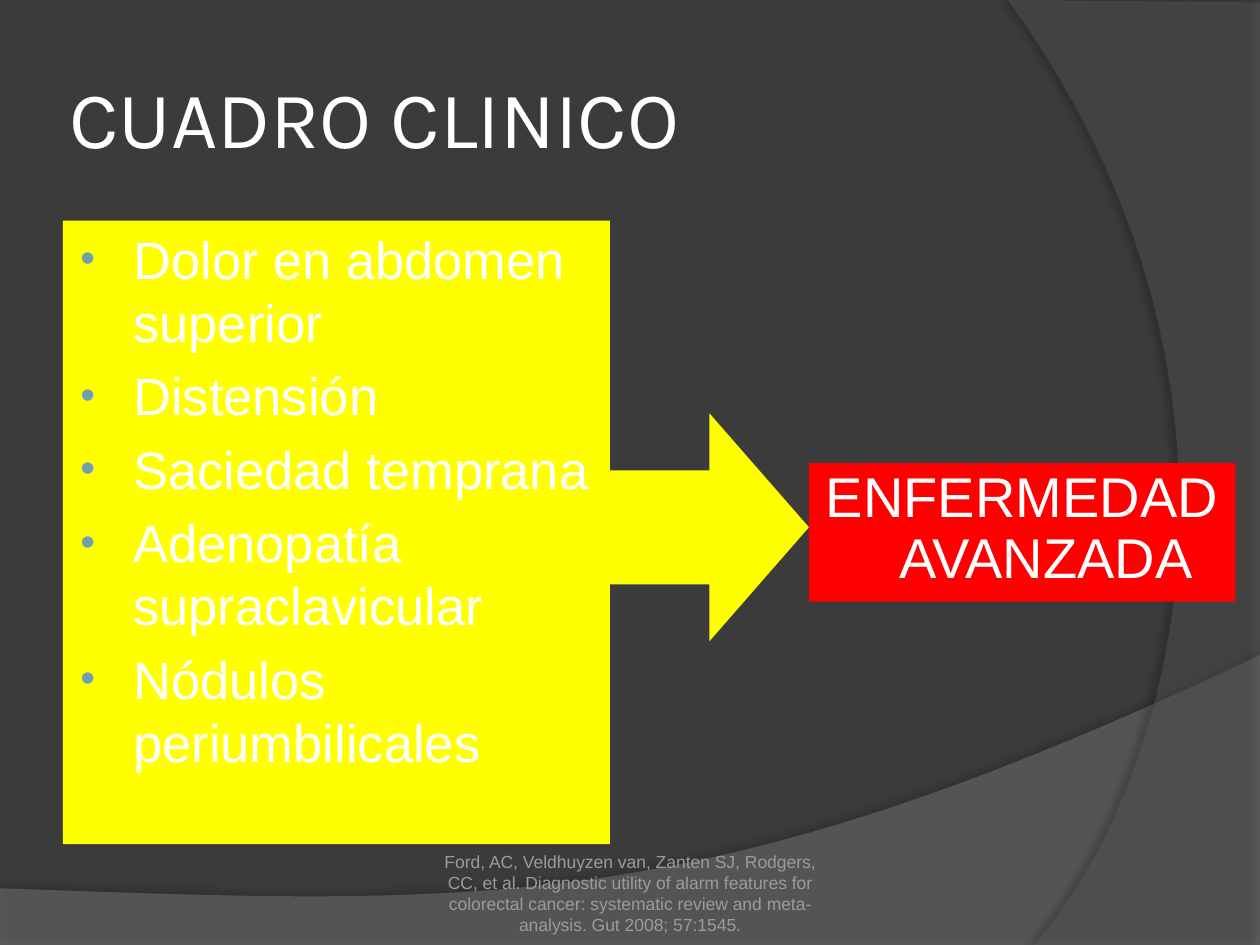
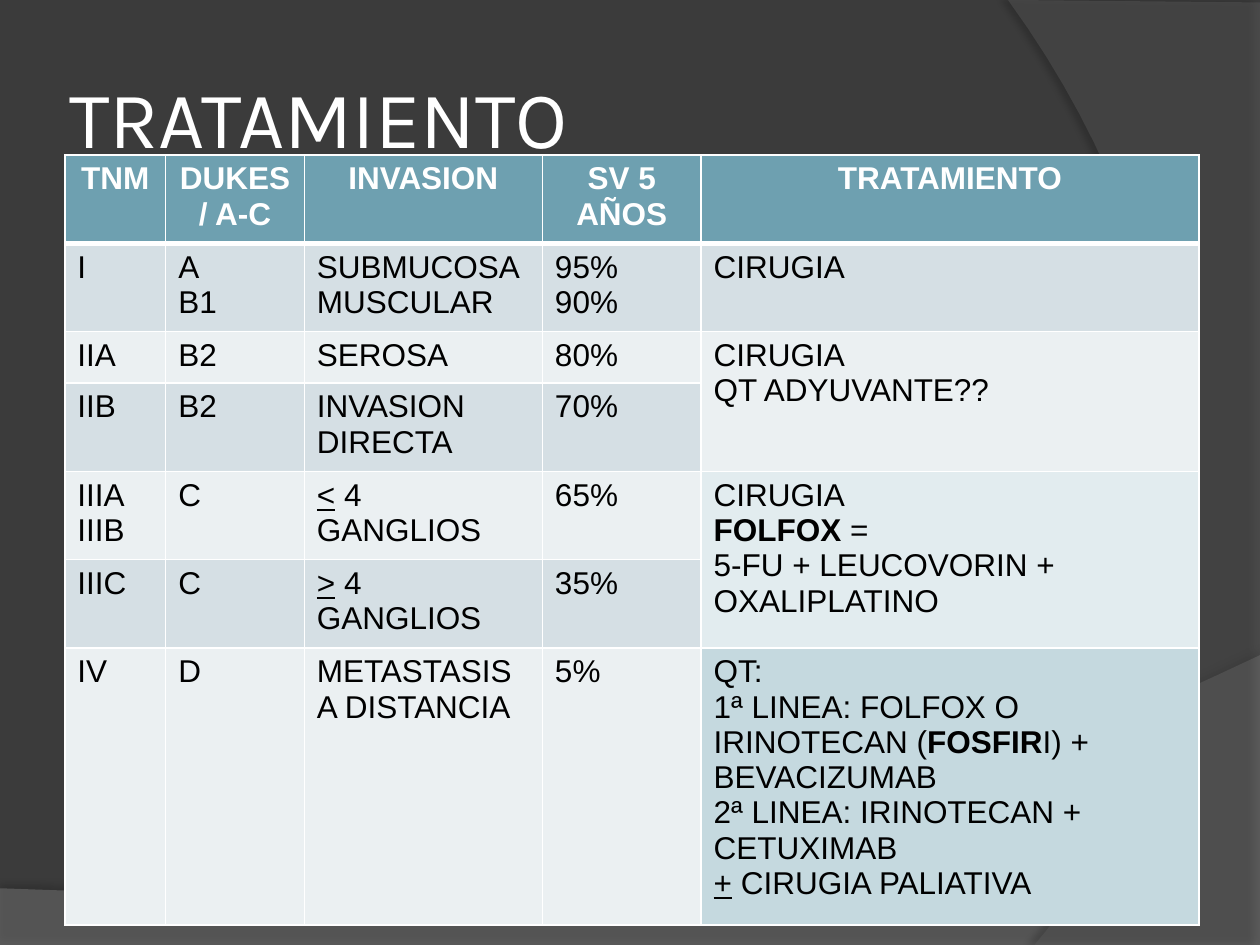
import pptx
import pptx.util
import pptx.dml.color
import pptx.enum.shapes
import pptx.enum.text
import pptx.oxml
import lxml.etree
from dataclasses import dataclass


@dataclass(frozen=True)
class Theme:
    background: str = "3B3B3B"
    low_band: str = "7F7F7F"
    side_band: str = "5E5E5E"
    white: str = "FFFFFF"
    black: str = "000000"
    accent: str = "6EA0B0"
    symptom: str = "FFFF00"
    alarm: str = "FF0000"
    citation: str = "9D9B9A"
    rows: tuple = ("EBF0F2", "D5DFE4")
    title_font: str = "Karla"
    body_font: str = "Arial"
    title_size: float = 46
    list_size: float = 30
    alarm_size: float = 32
    cell_size: float = 18
    citation_size: float = 10


theme = Theme()
color = pptx.dml.color.RGBColor.from_string
Pt = pptx.util.Pt
Shape = pptx.enum.shapes.MSO_SHAPE
Align = pptx.enum.text.PP_ALIGN
Anchor = pptx.enum.text.MSO_ANCHOR
DRAWING = "http://schemas.openxmlformats.org/drawingml/2006/main"

# Grid: 20 columns by 15 rows of half an inch
CELL = pptx.util.Inches(0.5)
COLUMNS, ROWS = 20, 15


def area(*cells):
    return [round(CELL * cell) for cell in cells]


def write(frame, lines, size, ink, font=theme.body_font, align=None, bold=False):
    """Fill a frame; *text* is bold and _text_ is underlined."""
    frame.word_wrap = True
    frame.text = "\n".join(lines)
    for para, line in zip(frame.paragraphs, lines):
        para.alignment = align
        mark = "_" if "_" in line else "*"
        pieces = line.split(mark)
        if len(pieces) > 1:
            para.clear()
            for piece in filter(None, pieces):
                para.add_run().text = piece
        marked = pieces[1::2]
        for span in para.runs:
            span.font.name, span.font.size = font, Pt(size)
            span.font.color.rgb = color(ink)
            span.font.bold = bold or (mark == "*" and span.text in marked)
            span.font.underline = mark == "_" and span.text in marked


deck = pptx.Presentation()
deck.slide_width, deck.slide_height = area(COLUMNS, ROWS)

# Bands: start point, then corners (one point) and curves (three points)
bands = [
    (theme.low_band, 45, 35, 3.5, 270, (0, 14.1),
     [[(0, 15)], [(20, 15)], [(20, 10.4)], [(11.18, 14.58), (7.82, 14.38), (0, 14.1)]]),
    (theme.side_band, 40, 45, 4, 180, (20, 0.04),
     [[(20, 15)], [(16.42, 15)], [(18.7, 12.38), (20.36, 6), (16, 0)]]),
]
CURVE_STEPS = 40

# Background, bands and title of every slide
pages = []
for title in ("CUADRO CLINICO", "TRATAMIENTO"):
    page = deck.slides.add_slide(deck.slide_layouts[6])
    page.background.fill.solid()
    page.background.fill.fore_color.rgb = color(theme.background)

    for fill, opacity, shade, distance, angle, start, segments in bands:
        outline = [start]
        for segment in segments:
            if len(segment) == 1:
                outline += segment
                continue
            curve = [outline[-1]] + segment
            for step in range(1, CURVE_STEPS + 1):
                t = step / CURVE_STEPS
                weights = ((1 - t) ** 3, 3 * t * (1 - t) ** 2, 3 * t * t * (1 - t), t ** 3)
                outline.append(tuple(sum(w * point[axis] for w, point in zip(weights, curve))
                                     for axis in (0, 1)))
        points = [area(*point) for point in outline]
        builder = page.shapes.build_freeform(*points[0], scale=1.0)
        builder.add_line_segments(points[1:], close=True)
        band = builder.convert_to_shape()
        band.fill.solid()
        band.fill.fore_color.rgb = color(fill)
        band.line.fill.background()
        band.shadow.inherit = False
        tint = band.element.spPr.find(f"{{{DRAWING}}}solidFill")[0]
        lxml.etree.SubElement(tint, f"{{{DRAWING}}}alpha", val=str(opacity * 1000))
        band.element.spPr.find(f"{{{DRAWING}}}effectLst").append(pptx.oxml.parse_xml(
            f'<a:outerShdw xmlns:a="{DRAWING}" blurRad="{Pt(4)}" dist="{Pt(distance)}" '
            f'dir="{angle * 60000}" algn="ctr" rotWithShape="0"><a:srgbClr val="{theme.black}">'
            f'<a:alpha val="{shade * 1000}"/></a:srgbClr></a:outerShdw>'))

    frame = page.shapes.add_textbox(*area(1, 0.6, 16.34, 2.5)).text_frame
    frame.margin_left = frame.margin_right = CELL // 10
    frame.vertical_anchor = Anchor.MIDDLE
    write(frame, [title], theme.title_size, theme.white, theme.title_font)
    pages.append(page)

clinical, treatment = pages

# Symptoms lead to advanced disease
LIST_LEFT, LIST_WIDTH, ARROW_WIDTH = 1, 8.68, 3.16
list_right = LIST_LEFT + LIST_WIDTH
blocks = []
for preset, place, fill in (
    (Shape.RECTANGLE, (LIST_LEFT, 3.5, LIST_WIDTH, 9.9), theme.symptom),
    (Shape.RIGHT_ARROW, (list_right, 6.56, ARROW_WIDTH, 3.62), theme.symptom),
    (Shape.RECTANGLE, (list_right + ARROW_WIDTH, 7.35, 6.77, 2.2), theme.alarm),
):
    block = clinical.shapes.add_shape(preset, *area(*place))
    block.shadow.inherit = False
    block.fill.solid()
    block.fill.fore_color.rgb = color(fill)
    block.line.fill.background()
    block.text_frame.vertical_anchor = Anchor.TOP
    blocks.append(block)
symptoms, arrow, alarm = blocks

write(symptoms.text_frame,
      ["Dolor en abdomen superior", "Distensión", "Saciedad temprana",
       "Adenopatía supraclavicular", "Nódulos periumbilicales"],
      theme.list_size, theme.white, align=Align.LEFT)
write(alarm.text_frame, ["ENFERMEDAD AVANZADA"], theme.alarm_size, theme.white,
      align=Align.CENTER)
alarm.text_frame.paragraphs[0].line_spacing = 0.9

# Hanging indents, and bullets for the symptoms
for block, margin, hang in ((symptoms, 0.92, 0.84), (alarm, 0.76, 0.76)):
    for para in block.text_frame.paragraphs:
        para.space_before = Pt(6)
        properties = para._p.get_or_add_pPr()
        properties.set("marL", str(round(CELL * margin)))
        properties.set("indent", str(-round(CELL * hang)))
        if block is symptoms:
            for bullet in (f'<a:buClr xmlns:a="{DRAWING}"><a:srgbClr val="{theme.accent}"/></a:buClr>',
                           f'<a:buSzPct xmlns:a="{DRAWING}" val="80000"/>',
                           f'<a:buFont xmlns:a="{DRAWING}" typeface="{theme.body_font}"/>',
                           f'<a:buChar xmlns:a="{DRAWING}" char="•"/>'):
                properties.append(pptx.oxml.parse_xml(bullet))

# Citation
frame = clinical.shapes.add_textbox(*area(6.83, 14.04, 6.34, 0.8)).text_frame
frame.margin_left = frame.margin_right = frame.margin_bottom = 0
frame.vertical_anchor = Anchor.BOTTOM
write(frame, ["Ford, AC, Veldhuyzen van, Zanten SJ, Rodgers, CC, et al. Diagnostic utility of "
              "alarm features for colorectal cancer: systematic review and meta-analysis. "
              "Gut 2008; 57:1545."],
      theme.citation_size, theme.citation, align=Align.CENTER)

# Treatment by stage; None continues the cell above
stages = [
    ["TNM", "DUKES / A-C", "INVASION", "SV 5 AÑOS", "TRATAMIENTO"],
    ["I", "A\nB1", "SUBMUCOSA MUSCULAR", "95%\n90%", "CIRUGIA"],
    ["IIA", "B2", "SEROSA", "80%", "CIRUGIA\nQT ADYUVANTE??"],
    ["IIB", "B2", "INVASION DIRECTA", "70%", None],
    ["IIIA\nIIIB", "C", "_<_ 4 GANGLIOS", "65%",
     "CIRUGIA\n*FOLFOX* =\n5-FU + LEUCOVORIN + OXALIPLATINO"],
    ["IIIC", "C", "_>_ 4 GANGLIOS", "35%", None],
    ["IV", "D", "METASTASIS A DISTANCIA", "5%",
     "QT:\n1ª LINEA: FOLFOX O IRINOTECAN (*FOSFIR*I) + BEVACIZUMAB\n"
     "2ª LINEA: IRINOTECAN + CETUXIMAB\n_+_ CIRUGIA PALIATIVA"],
]
special_fills = {(4, 4): "E2ECEF", (6, 4): "C5D9DF"}
widths = [1.6, 2.2, 3.78, 2.52, 7.9]
ROW_HEIGHT, TABLE_HEIGHT = 0.82, 12.22

holder = treatment.shapes.add_table(
    len(stages), len(widths), *area(1.03, 2.46, sum(widths), TABLE_HEIGHT))
table = holder.table
for column, width in zip(table.columns, area(*widths)):
    column.width = width
# Rows start at one line and grow with their text
for row in table.rows:
    row.height = round(CELL * ROW_HEIGHT)
holder.height = round(CELL * TABLE_HEIGHT)

for r, stage in enumerate(stages):
    header = r == 0
    for c, text in enumerate(stage):
        cell = table.cell(r, c)
        for side in "LRTB":
            weight = Pt(3 if header and side == "B" else 1)
            cell._tc.get_or_add_tcPr().append(pptx.oxml.parse_xml(
                f'<a:ln{side} xmlns:a="{DRAWING}" w="{weight}"><a:solidFill>'
                f'<a:srgbClr val="{theme.white}"/></a:solidFill></a:ln{side}>'))
        cell.fill.solid()
        cell.fill.fore_color.rgb = color(
            theme.accent if header else special_fills.get((r, c), theme.rows[r % 2]))
        if text is None:
            table.cell(r - 1, c).merge(cell)
            continue
        write(cell.text_frame, text.split("\n"), theme.cell_size,
              theme.white if header else theme.black,
              align=Align.CENTER if header else Align.LEFT, bold=header)

deck.save("out.pptx")
